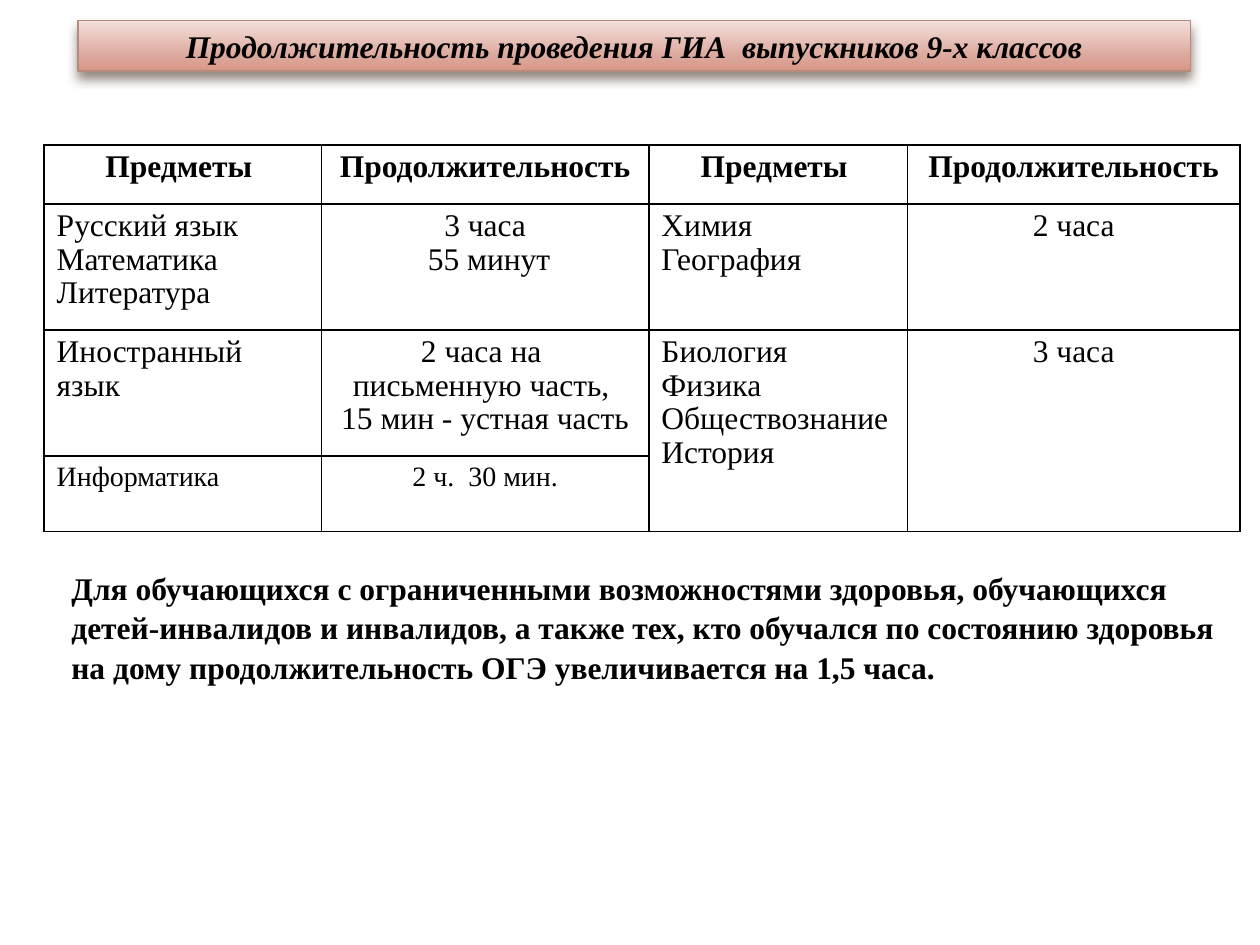
"""Build the slide with exam durations for ninth-grade graduates."""
from copy import deepcopy
from dataclasses import dataclass

from pptx import Presentation
from pptx.dml.color import RGBColor
from pptx.enum.text import MSO_ANCHOR, MSO_AUTO_SIZE, PP_ALIGN
from pptx.oxml import parse_xml
from pptx.oxml.ns import nsdecls, qn
from pptx.util import Cm, Pt

LEFT, CENTER = PP_ALIGN.LEFT, PP_ALIGN.CENTER
MIDDLE = MSO_ANCHOR.MIDDLE
FIXED = MSO_AUTO_SIZE.NONE


@dataclass(frozen=True)
class Theme:
    font: str = "Times New Roman"
    ink: str = "000000"
    edge: str = "B58B80"
    shade: str = "4E3B30"
    blend: tuple = ((0, "F3E0DB"), (0.72, "DCA79B"), (1, "D89787"))
    body: int = 18
    small: int = 16


theme = Theme()


def write(frame, text, size=theme.body, bold=False, italic=False, align=LEFT, pitch=None):
    frame.word_wrap = True
    for i, line in enumerate(text.split("\n")):
        para = frame.add_paragraph() if i else frame.paragraphs[0]
        para.alignment = align
        para.line_spacing = pitch
        run = para.add_run()
        run.text = line
        font = run.font
        font.name, font.size = theme.font, Pt(size)
        font.bold, font.italic = bold, italic
        font.color.rgb = RGBColor.from_string(theme.ink)


def border(cell):
    props = cell._tc.get_or_add_tcPr()
    for i, side in enumerate("LRTB"):
        props.insert(i, parse_xml(
            f'<a:ln{side} {nsdecls("a")} w="12700"><a:solidFill>'
            f'<a:srgbClr val="{theme.ink}"/></a:solidFill></a:ln{side}>'))


deck = Presentation()
deck.slide_width, deck.slide_height = Cm(25.4), Cm(19.05)
slide = deck.slides.add_slide(deck.slide_layouts[5])

title = slide.shapes.title
title.left, title.top = Cm(1.57), Cm(0.41)
title.width, title.height = Cm(22.43), Cm(1.02)
title.fill.gradient()
title.fill.gradient_angle = 270
stops = title._element.spPr.find(qn("a:gradFill")).find(qn("a:gsLst"))
stops.append(deepcopy(stops[-1]))
for stop, (place, color) in zip(title.fill.gradient_stops, theme.blend):
    stop.position = place
    stop.color.rgb = RGBColor.from_string(color)
title.line.color.rgb = RGBColor.from_string(theme.edge)
title.line.width = Pt(0.79)
title._element.spPr.append(parse_xml(
    f'<a:effectLst {nsdecls("a")}><a:outerShdw blurRad="{Pt(6)}" dist="{Pt(4)}" '
    f'dir="5400000" rotWithShape="0"><a:srgbClr val="{theme.shade}">'
    '<a:alpha val="60000"/></a:srgbClr></a:outerShdw></a:effectLst>'))
title.text_frame.auto_size = FIXED
title.text_frame.vertical_anchor = MIDDLE
write(title.text_frame, "Продолжительность проведения ГИА  выпускников 9-х классов",
      bold=True, italic=True, align=CENTER)

cols = (5.59, 6.6, 5.21, 6.71)
rows = (1.19, 2.54, 2.54, 1.52)
cells = (
    ("Предметы ", "Продолжительность") * 2,
    ("Русский язык\nМатематика\nЛитература", "3 часа\n 55 минут",
     "Химия\nГеография", "2 часа"),
    ("Иностранный язык", "2 часа на \nписьменную часть, \n15 мин - устная часть",
     "Биология\nФизика Обществознание\nИстория", "3 часа"),
    ("Информатика", "2 ч.  30 мин.", "", ""),
)
table = slide.shapes.add_table(len(rows), len(cols), Cm(0.89), Cm(2.92),
                               Cm(sum(cols)), Cm(sum(rows))).table
table.first_row = table.horz_banding = False
for col, width in zip(table.columns, cols):
    col.width = Cm(width)
for row, height in zip(table.rows, rows):
    row.height = Cm(height)
for c in (2, 3):
    table.cell(2, c).merge(table.cell(3, c))
for r, line in enumerate(cells):
    for c, text in enumerate(line):
        cell = table.cell(r, c)
        cell.fill.background()
        border(cell)
        if text:
            write(cell.text_frame, text, size=theme.small if r == 3 else theme.body,
                  bold=r == 0, align=CENTER if r == 0 or c % 2 else LEFT, pitch=0.96)

note = slide.shapes.add_textbox(Cm(1.19), Cm(11.3), Cm(23.62), Cm(2.57))
write(note.text_frame,
      "Для обучающихся с ограниченными возможностями здоровья, обучающихся "
      "детей-инвалидов и инвалидов, а также тех, кто обучался по состоянию здоровья "
      "на дому продолжительность ОГЭ увеличивается на 1,5 часа.",
      bold=True, pitch=1.05)

deck.save("out.pptx")
